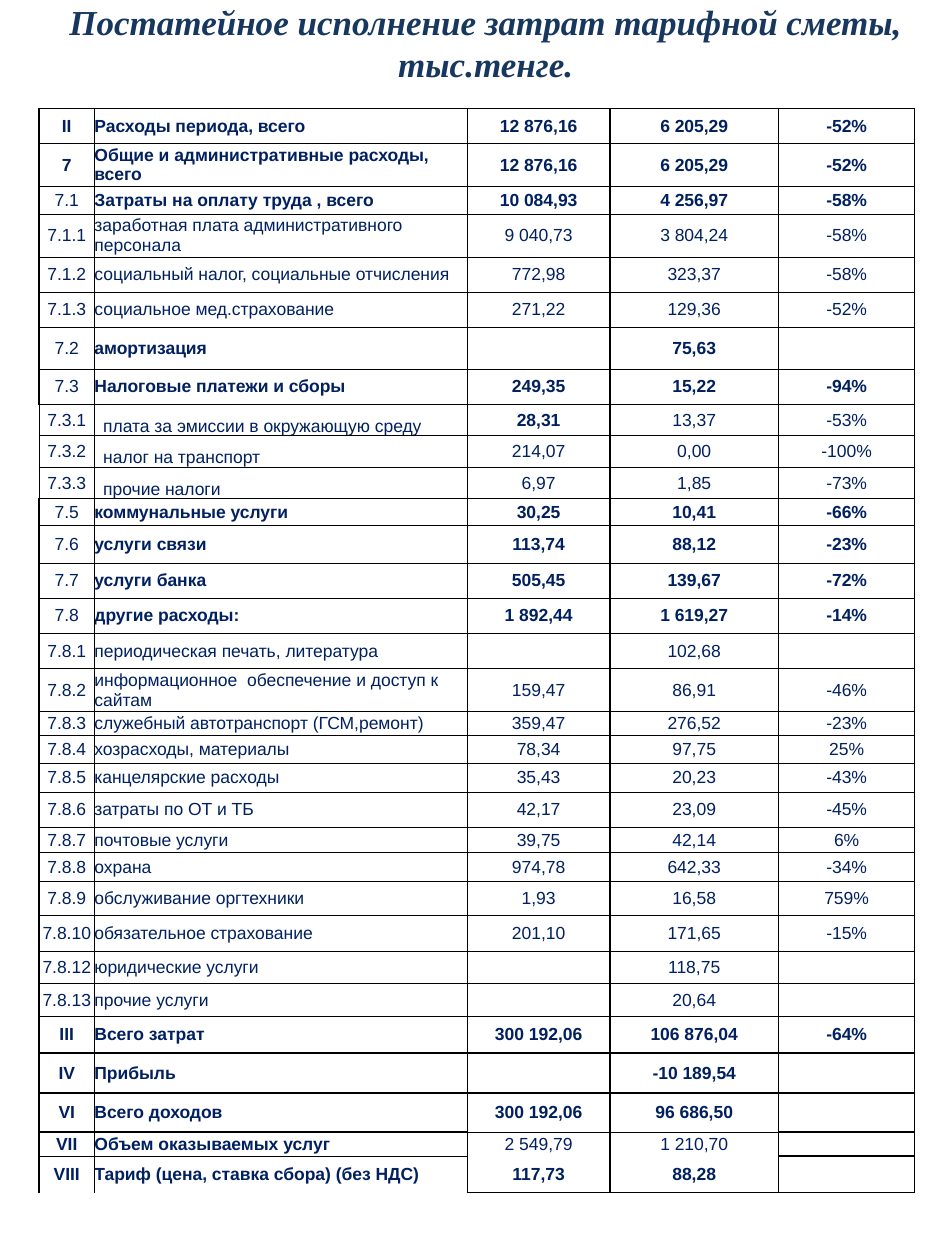
from lxml import etree
from pptx import Presentation
from pptx.dml.color import RGBColor
from pptx.enum.text import MSO_ANCHOR, PP_ALIGN
from pptx.oxml.ns import qn
from pptx.util import Inches, Pt

MID, LOW = MSO_ANCHOR.MIDDLE, MSO_ANCHOR.BOTTOM
LEFT, MITTE = PP_ALIGN.LEFT, PP_ALIGN.CENTER
NAVY, BLUE, BLACK = "002060", "17375E", "000000"


def write(para, text, size, face, color, bold, slant=False):
    run = para.add_run()
    run.text = text
    font = run.font
    font.size, font.name = Pt(size), face
    font.bold, font.italic = bold, slant
    font.color.rgb = RGBColor.from_string(color)


def edge(cell, pos, side, width, color):
    line = etree.Element(qn("a:ln" + side), w=str(Pt(width)))
    if width:
        fill = etree.SubElement(line, qn("a:solidFill"))
        etree.SubElement(fill, qn("a:srgbClr"), val=color)
    else:
        etree.SubElement(line, qn("a:noFill"))
    cell._tc.get_or_add_tcPr().insert(pos, line)


rows = [
    (0.28, "11111", "II", "Расходы периода, всего", "12 876,16", "6 205,29", "-52%"),
    (0.34, "11111", "7", "Общие и административные расходы, всего", "12 876,16", "6 205,29", "-52%"),
    (0.22, "01111", "7.1", "Затраты на оплату труда , всего", "10 084,93", "4 256,97", "-58%"),
    (0.34, "00000", "7.1.1", "заработная плата административного персонала", "9 040,73", "3 804,24", "-58%"),
    (0.28, "00000", "7.1.2", "социальный налог, социальные отчисления", "772,98", "323,37", "-58%"),
    (0.28, "00000", "7.1.3", "социальное мед.страхование", "271,22", "129,36", "-52%"),
    (0.33, "01111", "7.2", "амортизация", "", "75,63", ""),
    (0.28, "01111", "7.3", "Налоговые платежи и сборы", "249,35", "15,22", "-94%"),
    (0.25, "00100", "7.3.1", "плата за эмиссии в окружающую среду", "28,31", "13,37", "-53%"),
    (0.25, "00000", "7.3.2", "налог на транспорт", "214,07", "0,00", "-100%"),
    (0.25, "00000", "7.3.3", "прочие налоги", "6,97", "1,85", "-73%"),
    (0.21, "01111", "7.5", "коммунальные услуги", "30,25", "10,41", "-66%"),
    (0.3, "01111", "7.6", "услуги связи", "113,74", "88,12", "-23%"),
    (0.28, "01111", "7.7", "услуги банка", "505,45", "139,67", "-72%"),
    (0.28, "01111", "7.8", "другие расходы:", "1 892,44", "1 619,27", "-14%"),
    (0.28, "00000", "7.8.1", "периодическая печать, литература", "", "102,68", ""),
    (0.34, "00000", "7.8.2", "информационное  обеспечение и доступ к сайтам", "159,47", "86,91", "-46%"),
    (0.19, "00000", "7.8.3", "служебный автотранспорт (ГСМ,ремонт)", "359,47", "276,52", "-23%"),
    (0.22, "00000", "7.8.4", "хозрасходы, материалы", "78,34", "97,75", "25%"),
    (0.23, "00000", "7.8.5", "канцелярские расходы", "35,43", "20,23", "-43%"),
    (0.28, "00000", "7.8.6", "затраты по ОТ и ТБ", "42,17", "23,09", "-45%"),
    (0.2, "00000", "7.8.7", "почтовые услуги", "39,75", "42,14", "6%"),
    (0.23, "00000", "7.8.8", "охрана", "974,78", "642,33", "-34%"),
    (0.27, "00000", "7.8.9", "обслуживание оргтехники", "1,93", "16,58", "759%"),
    (0.28, "00000", "7.8.10", "обязательное страхование", "201,10", "171,65", "-15%"),
    (0.26, "00000", "7.8.12", "юридические услуги", "", "118,75", ""),
    (0.26, "00000", "7.8.13", "прочие услуги", "", "20,64", ""),
    (0.29, "11111", "III", "Всего затрат", "300 192,06", "106 876,04", "-64%"),
    (0.32, "11111", "IV", "Прибыль", "", "-10 189,54", ""),
    (0.31, "11111", "VI", "Всего доходов", "300 192,06", "96 686,50", ""),
    (0.19, "11000", "VII", "Объем оказываемых услуг", "2 549,79", "1 210,70", ""),
    (0.29, "11111", "VIII", "Тариф (цена, ставка сбора) (без НДС)", "117,73", "88,28", ""),
]
cols = [0.44, 2.96, 1.13, 1.34, 1.08]
rules = [[0.5] * 5] * 27 + [[1] * 5] * 3
rules += [[1, 1, 0.5, 0.5, 1], [0.5, 0.5, 0, 0, 1], [0, 0, 1, 1, 1]]
taxes = ("7.3.1", "7.3.2", "7.3.3")

deck = Presentation()
deck.slide_width, deck.slide_height = Inches(7.5), Inches(10)
slide = deck.slides.add_slide(deck.slide_layouts[6])

title = slide.shapes.add_textbox(Inches(0.21), Inches(-0.05), Inches(7.29), Inches(0.77))
frame = title.text_frame
frame.word_wrap = True
frame.vertical_anchor = MID
para = frame.paragraphs[0]
para.alignment = MITTE
write(para, "Постатейное исполнение затрат тарифной сметы, тыс.тенге.",
      20, "Times New Roman", BLUE, True, True)

high = sum(row[0] for row in rows)
table = slide.shapes.add_table(len(rows), len(cols), Inches(0.31), Inches(0.86),
                               Inches(sum(cols)), Inches(high)).table
table.first_row = table.horz_banding = False
for col, width in zip(table.columns, cols):
    col.width = Inches(width)

for r, (height, bolds, *texts) in enumerate(rows):
    table.rows[r].height = Inches(height)
    tax = texts[0] in taxes
    for c, text in enumerate(texts):
        cell = table.cell(r, c)
        inset = tax and c == 1
        cell.margin_left = Inches(0.07 if inset else 0)
        cell.margin_right = cell.margin_top = cell.margin_bottom = 0
        cell.vertical_anchor = LOW if inset else MID
        cell.fill.background()
        para = cell.text_frame.paragraphs[0]
        para.alignment = LEFT if c == 1 else MITTE
        if text:
            write(para, text, 10, "Arial", NAVY, bolds[c] == "1")
        else:
            etree.SubElement(para._p, qn("a:endParaRPr"), sz="1000")
        sides = [0.5 if tax and c == 0 else 1, 1, rules[r][c], rules[r + 1][c]]
        for pos, (side, width) in enumerate(zip("LRTB", sides)):
            edge(cell, pos, side, width, BLACK)

deck.save("out.pptx")
